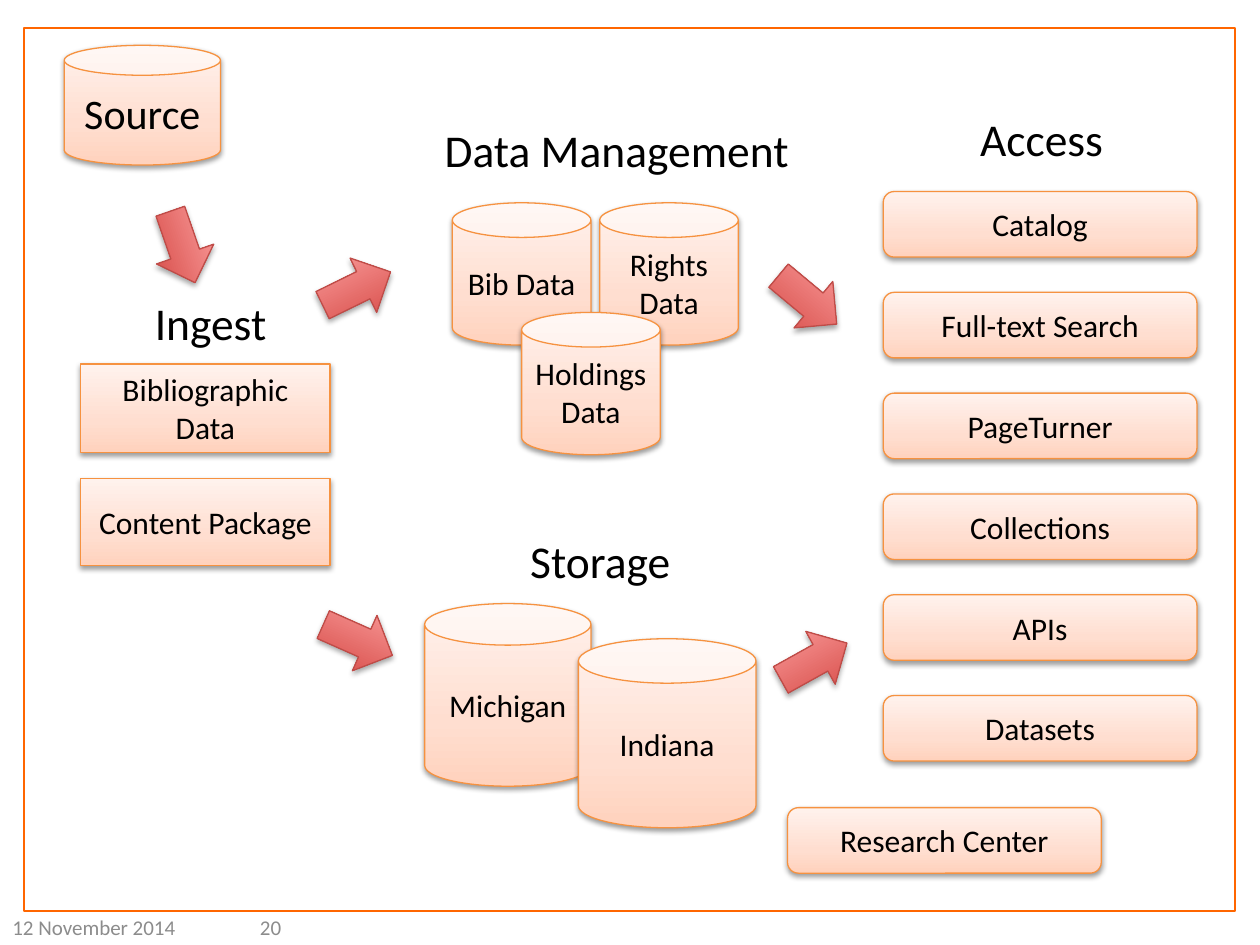
from lxml.etree import SubElement
from pptx import Presentation
from pptx.dml.color import RGBColor
from pptx.enum.shapes import MSO_SHAPE
from pptx.enum.text import MSO_ANCHOR, PP_ALIGN
from pptx.oxml.ns import qn
from pptx.util import Inches, Pt

COLORS = {
    "paper": "FFFFFF",
    "frame": "FF6600",
    "text": "000000",
    "footer": "8C8C8C",
    "shadow": "000000",
    "peach_line": "F69240",
    "red_line": "BF4C48",
}
PEACH = [(0, "FFD2BD"), (35, "FFDED0"), (100, "FFF2ED")]
RED = [(0, "D1403C"), (100, "FFA6A5")]

CONTENT = [
    (MSO_SHAPE.CAN, "Source", (0.51, 0.36, 1.24, 0.95), 24),
    (MSO_SHAPE.RECTANGLE, "Bibliographic Data", (0.64, 2.89, 1.98, 0.7), 18),
    (MSO_SHAPE.RECTANGLE, "Content Package", (0.64, 3.8, 1.98, 0.69), 18),
    (MSO_SHAPE.CAN, "Michigan", (3.37, 4.79, 1.32, 1.45), 18),
    (MSO_SHAPE.CAN, "Indiana", (4.59, 5.07, 1.41, 1.5), 18),
    (MSO_SHAPE.CAN, "Bib Data", (3.59, 1.61, 1.1, 1.13), 18),
    (MSO_SHAPE.CAN, "Rights Data", (4.76, 1.61, 1.1, 1.13), 18),
    (MSO_SHAPE.CAN, "Holdings Data", (4.14, 2.48, 1.1, 1.13), 18),
]
HEADINGS = [
    ("Ingest", 1.13, 2.29, 1.61),
    ("Data Management", 3.43, 0.92, 3.58),
    ("Storage", 4.11, 4.18, 1.77),
    ("Access", 7.68, 0.83, 1.99),
]
ARROWS = [
    (1.15, 1.72, 70.9),
    (2.53, 2.05, 333.9),
    (2.54, 4.84, 24),
    (6.11, 2.14, 39.8),
    (6.16, 5.01, 330.9),
]
SERVICES = ["Catalog", "Full-text Search", "PageTurner", "Collections", "APIs", "Datasets"]
SERVICE_LEFT, SERVICE_TOP, SERVICE_PITCH = 7.01, 1.52, 0.8
SERVICE_SIZE = (2.49, 0.52)


def color(name):
    return RGBColor.from_string(COLORS[name])


def write(shape, text, size, align, tone="text", anchor=MSO_ANCHOR.MIDDLE):
    frame = shape.text_frame
    frame.word_wrap = True
    frame.vertical_anchor = anchor
    frame.text = text
    paragraph = frame.paragraphs[0]
    paragraph.alignment = align
    font = paragraph.runs[0].font
    font.name = "Calibri"
    font.size = Pt(size)
    font.color.rgb = color(tone)


def add_gradient(shape, stops):
    gradient = SubElement(shape._element.spPr, qn("a:gradFill"), rotWithShape="1")
    stop_list = SubElement(gradient, qn("a:gsLst"))
    for position, value in stops:
        stop = SubElement(stop_list, qn("a:gs"), pos=str(position * 1000))
        SubElement(stop, qn("a:srgbClr"), val=value)
    SubElement(gradient, qn("a:lin"), ang=str(270 * 60000), scaled="0")


def add_shadow(shape, opacity, distance):
    effects = SubElement(shape._element.spPr, qn("a:effectLst"))
    shadow = SubElement(effects, qn("a:outerShdw"), blurRad=str(Pt(3.1)),
                        dist=str(Pt(distance)), dir=str(90 * 60000), rotWithShape="0")
    tone = SubElement(shadow, qn("a:srgbClr"), val=COLORS["shadow"])
    SubElement(tone, qn("a:alpha"), val=str(opacity * 1000))


def add_raised(page, kind, place, stops, line, opacity, distance):
    shape = page.shapes.add_shape(kind, *map(Inches, place))
    add_gradient(shape, stops)
    shape.line.color.rgb = color(line)
    shape.line.width = Pt(0.75)
    add_shadow(shape, opacity, distance)
    return shape


def add_item(page, kind, text, place, size=18):
    shape = add_raised(page, kind, place, PEACH, "peach_line", 38, 1.6)
    write(shape, text, size, PP_ALIGN.CENTER)


def add_arrow(page, left, top, angle):
    place = (left, top, 0.6, 0.48)
    shape = add_raised(page, MSO_SHAPE.RIGHT_ARROW, place, RED, "red_line", 35, 1.8)
    shape.rotation = angle


def add_heading(page, text, left, top, width):
    box = page.shapes.add_textbox(*map(Inches, (left, top, width, 0.54)))
    write(box, text, 26, PP_ALIGN.LEFT, anchor=MSO_ANCHOR.TOP)


def add_footer(page, text, align):
    box = page.shapes.add_textbox(*map(Inches, (0, 7.22, 2.33, 0.28)))
    write(box, text, 12, align, "footer")


def add_frame(page):
    frame = page.shapes.add_shape(MSO_SHAPE.RECTANGLE, *map(Inches, (0.19, 0.22, 9.61, 7.01)))
    frame.shadow.inherit = False
    frame.fill.solid()
    frame.fill.fore_color.rgb = color("paper")
    frame.line.color.rgb = color("frame")
    frame.line.width = Pt(1)


def main():
    deck = Presentation()
    deck.slide_width, deck.slide_height = Inches(10), Inches(7.5)
    page = deck.slides.add_slide(deck.slide_layouts[6])
    add_frame(page)
    for item in CONTENT:
        add_item(page, *item)
    for heading in HEADINGS:
        add_heading(page, *heading)
    for row, service in enumerate(SERVICES):
        top = SERVICE_TOP + row * SERVICE_PITCH
        add_item(page, MSO_SHAPE.ROUNDED_RECTANGLE, service, (SERVICE_LEFT, top, *SERVICE_SIZE))
    add_item(page, MSO_SHAPE.ROUNDED_RECTANGLE, "Research Center", (6.25, 6.41, *SERVICE_SIZE))
    for arrow in ARROWS:
        add_arrow(page, *arrow)
    add_footer(page, "12 November 2014", PP_ALIGN.LEFT)
    add_footer(page, "20", PP_ALIGN.RIGHT)
    deck.save("out.pptx")


if __name__ == "__main__":
    main()
